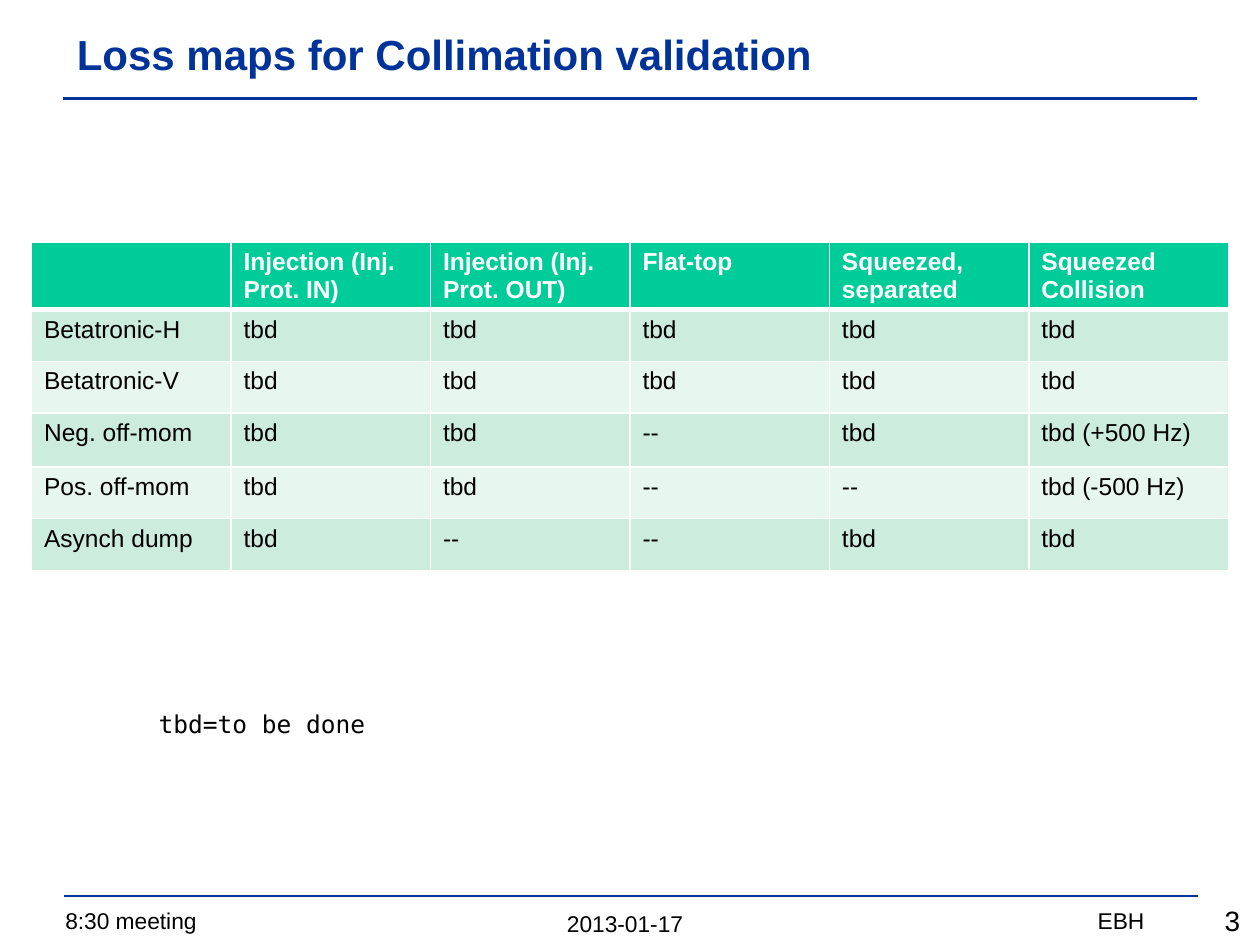
"""Build the collimation loss-map status slide."""
from lxml.etree import SubElement
from pptx import Presentation
from pptx.dml.color import RGBColor as RGB
from pptx.enum.shapes import MSO_CONNECTOR as CONN
from pptx.enum.text import MSO_ANCHOR as ANCHOR, PP_ALIGN as ALIGN
from pptx.oxml.ns import qn
from pptx.util import Inches, Pt

THEME = {
    "navy": "003399", "black": "000000", "white": "FFFFFF",
    "header": "00CC99", "bands": ("CCECDE", "E7F6EF"),
    "font": "Arial", "mono": "DejaVu Sans Mono",
    "title": 24, "number": 16, "body": 14, "footer": 13,
    "rule": 1.5, "border": 1, "header_border": 3,
}
TITLE = "Loss maps for Collimation validation"
HEADER = ["", "Injection (Inj. Prot. IN)", "Injection (Inj. Prot. OUT)",
          "Flat-top", "Squeezed, separated", "Squeezed Collision"]
ROWS = [
    ["Betatronic-H", "tbd", "tbd", "tbd", "tbd", "tbd"],
    ["Betatronic-V", "tbd", "tbd", "tbd", "tbd", "tbd"],
    ["Neg. off-mom", "tbd", "tbd", "--", "tbd", "tbd (+500 Hz)"],
    ["Pos. off-mom", "tbd", "tbd", "--", "--", "tbd (-500 Hz)"],
    ["Asynch dump", "tbd", "--", "--", "tbd", "tbd"],
]
ROW_HEIGHTS = [0.41, 0.41, 0.41, 0.43, 0.41, 0.41]
TABLE_BOX = (0.25, 1.92, 9.5, sum(ROW_HEIGHTS))
TITLE_BOX = (0.51, 0.09, 8.99, 0.68)
RULES = [(0.5, 0.78), (0.51, 7.11)]
RULE_WIDTH = 9
TEXTS = [
    ("2013-01-17", (2.42, 7.17, 5.08, 0.32), "footer", "font", ALIGN.CENTER),
    ("8:30 meeting", (0.42, 7.15, 3.7, 0.32), "footer", "font", ALIGN.LEFT),
    ("EBH", (6.26, 7.15, 2.92, 0.32), "footer", "font", ALIGN.RIGHT),
    ("3", (8.79, 7.12, 1.15, 0.37), "number", "font", ALIGN.RIGHT),
    ("tbd=to be done", (1.16, 5.58, 4.88, 0.4), "body", "mono", ALIGN.LEFT),
]


def inches(box):
    return [Inches(v) for v in box]


def write(tf, text, size, color="black", bold=False, font="font", align=ALIGN.LEFT):
    p = tf.paragraphs[0]
    p.text = text
    p.alignment = align
    p.font.name = THEME[font]
    p.font.size = Pt(THEME[size])
    p.font.bold = bold
    p.font.color.rgb = RGB.from_string(THEME[color])


def add_title(s):
    sp = s.shapes.title
    sp.left, sp.top, sp.width, sp.height = inches(TITLE_BOX)
    sp.text_frame.vertical_anchor = ANCHOR.MIDDLE
    write(sp.text_frame, TITLE, "title", "navy", True)


def add_text(s, text, box, size, font, align):
    tf = s.shapes.add_textbox(*inches(box)).text_frame
    tf.word_wrap = True
    write(tf, text, size, font=font, align=align)


def add_rule(s, x, y):
    line = s.shapes.add_connector(CONN.STRAIGHT, *inches((x, y, x + RULE_WIDTH, y)))
    line.line.color.rgb = RGB.from_string(THEME["navy"])
    line.line.width = Pt(THEME["rule"])
    SubElement(line._element.spPr, qn("a:effectLst"))


def add_borders(cell, widths):
    tc_pr = cell._tc.get_or_add_tcPr()
    for side, width in widths.items():
        ln = SubElement(tc_pr, qn(f"a:ln{side}"), w=str(Pt(width)))
        fill = SubElement(ln, qn("a:solidFill"))
        SubElement(fill, qn("a:srgbClr"), val=THEME["white"])


def style_cell(cell, text, row):
    is_header = row == 0
    widths = dict.fromkeys("LRTB", THEME["border"])
    if row < 2:
        widths["B" if is_header else "T"] = THEME["header_border"]
    add_borders(cell, widths)
    cell.fill.solid()
    color = THEME["header"] if is_header else THEME["bands"][(row - 1) % 2]
    cell.fill.fore_color.rgb = RGB.from_string(color)
    write(cell.text_frame, text, "body", "white" if is_header else "black", is_header)


def add_status_table(s):
    data = [HEADER, *ROWS]
    table = s.shapes.add_table(len(data), len(HEADER), *inches(TABLE_BOX)).table
    for row, height in zip(table.rows, ROW_HEIGHTS):
        row.height = Inches(height)
    for r, values in enumerate(data):
        for c, text in enumerate(values):
            style_cell(table.cell(r, c), text, r)


def main():
    prs = Presentation()
    prs.slide_width, prs.slide_height = Inches(10), Inches(7.5)
    s = prs.slides.add_slide(prs.slide_layouts[5])
    add_title(s)
    for x, y in RULES:
        add_rule(s, x, y)
    add_status_table(s)
    for item in TEXTS:
        add_text(s, *item)
    prs.save("out.pptx")


if __name__ == "__main__":
    main()
